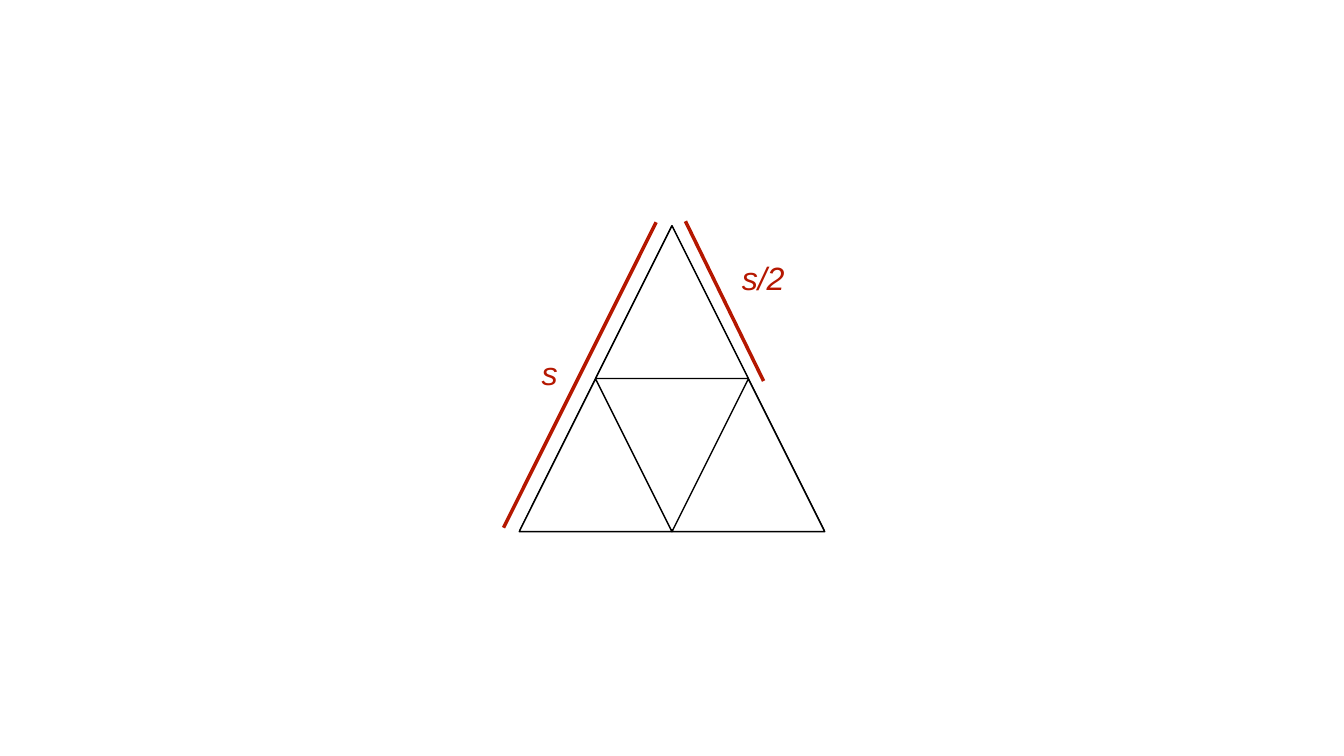
from dataclasses import dataclass

from lxml import etree
from pptx import Presentation
from pptx.dml.color import RGBColor
from pptx.enum import shapes, text
from pptx.oxml import ns
from pptx.util import Pt


@dataclass(frozen=True)
class Theme:
    paper: RGBColor = RGBColor(0xFF, 0xFF, 0xFF)
    ink: RGBColor = RGBColor(0, 0, 0)
    accent: RGBColor = RGBColor(0xB5, 0x17, 0x00)
    font: str = "Arial"
    label_size: float = 46
    outline: float = 2
    measure: float = 5


@dataclass(frozen=True)
class Triangle:
    """Isosceles triangle, as wide as it is high."""
    apex_x: float
    apex_y: float
    side: float


@dataclass(frozen=True)
class Measure:
    """Line along a side, with its label box."""
    start: tuple[float, float]
    end: tuple[float, float]
    label: str
    box: tuple[float, float, float, float]


THEME = Theme()
WIDTH, HEIGHT = 1920, 1080
CENTER = WIDTH / 2
BIG, SMALL = 434.4, 218.2
TOP, MIDDLE = 322.6, 541.4

TRIANGLES = [
    Triangle(CENTER, TOP, BIG),
    Triangle(CENTER, TOP, SMALL),
    Triangle(CENTER - SMALL / 2, MIDDLE, SMALL),
    Triangle(CENTER + SMALL / 2, MIDDLE, SMALL),
]
MEASURES = [
    Measure((719.3, 753.8), (937.4, 317.5), "s", (766.8, 498.2, 38.2, 69.1)),
    Measure((1090.8, 544.3), (979.2, 316.1), "s/2", (1052.6, 361.4, 77, 69.1)),
]


def draw_triangle(slide, t: Triangle) -> None:
    base_y = t.apex_y + t.side
    builder = slide.shapes.build_freeform(Pt(t.apex_x), Pt(t.apex_y))
    builder.add_line_segments(
        [(Pt(t.apex_x + dx), Pt(base_y)) for dx in (t.side / 2, -t.side / 2)])
    sp = builder.convert_to_shape()
    sp.shadow.inherit = False
    sp.fill.solid()
    sp.fill.fore_color.rgb = THEME.paper
    sp.line.color.rgb = THEME.ink
    sp.line.width = Pt(THEME.outline)


def draw_measure(slide, m: Measure) -> None:
    # Label
    tf = slide.shapes.add_textbox(*map(Pt, m.box)).text_frame
    frame_format = {
        "word_wrap": False,
        "auto_size": text.MSO_AUTO_SIZE.SHAPE_TO_FIT_TEXT,
        "vertical_anchor": text.MSO_ANCHOR.MIDDLE,
        **{f"margin_{edge}": Pt(7.2) for edge in ("left", "top", "right", "bottom")},
    }
    for name, value in frame_format.items():
        setattr(tf, name, value)
    r = tf.paragraphs[0].add_run()
    r.text = m.label
    font_format = {"name": THEME.font, "size": Pt(THEME.label_size), "italic": True}
    for name, value in font_format.items():
        setattr(r.font, name, value)
    r.font.color.rgb = THEME.accent

    # Line without shadow
    line = slide.shapes.add_connector(
        shapes.MSO_CONNECTOR.STRAIGHT, *map(Pt, m.start + m.end))
    line.line.color.rgb = THEME.accent
    line.line.width = Pt(THEME.measure)
    etree.SubElement(line._element.spPr, ns.qn("a:effectLst"))


def main() -> None:
    prs = Presentation()
    prs.slide_width, prs.slide_height = Pt(WIDTH), Pt(HEIGHT)
    slide = prs.slides.add_slide(prs.slide_layouts[6])

    # Large triangle, then its three half-size parts
    for triangle in TRIANGLES:
        draw_triangle(slide, triangle)

    # Side lengths
    for measure in MEASURES:
        draw_measure(slide, measure)

    prs.save("out.pptx")


if __name__ == "__main__":
    main()
